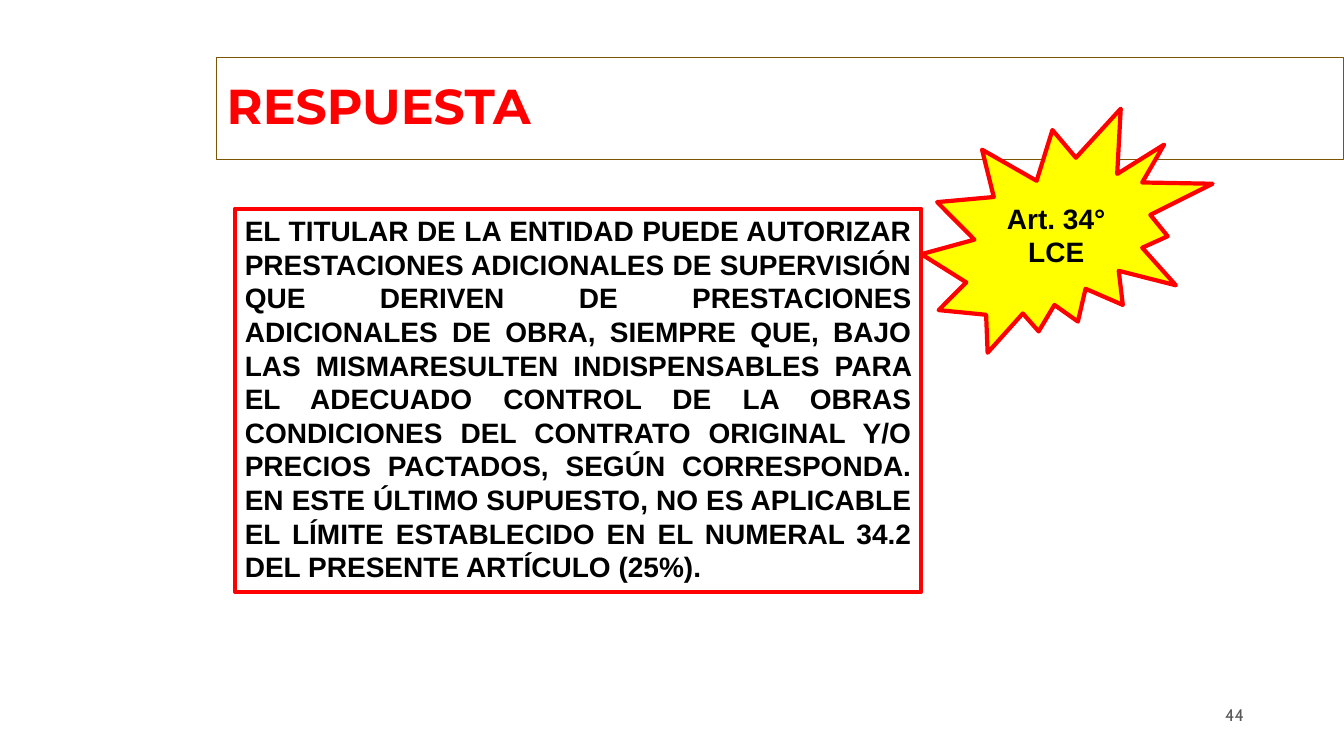
from dataclasses import dataclass

from pptx import Presentation
from pptx.dml.color import RGBColor
from pptx.enum.shapes import MSO_SHAPE
from pptx.enum.text import MSO_ANCHOR, MSO_AUTO_SIZE, PP_ALIGN
from pptx.util import Cm, Pt

HEADING = "RESPUESTA"
ANSWER = (
    "EL TITULAR DE LA ENTIDAD PUEDE AUTORIZAR PRESTACIONES ADICIONALES DE "
    "SUPERVISIÓN QUE DERIVEN DE PRESTACIONES ADICIONALES DE OBRA, SIEMPRE QUE, "
    "BAJO LAS MISMARESULTEN INDISPENSABLES PARA EL ADECUADO CONTROL DE LA OBRAS "
    "CONDICIONES DEL CONTRATO ORIGINAL Y/O PRECIOS PACTADOS, SEGÚN CORRESPONDA. "
    "EN ESTE ÚLTIMO SUPUESTO, NO ES APLICABLE EL LÍMITE ESTABLECIDO EN EL "
    "NUMERAL 34.2 DEL PRESENTE ARTÍCULO (25%)."
)
CITED_ARTICLE = "Art. 34° LCE"
PAGE_NUMBER = "44"


@dataclass(frozen=True)
class Theme:
    red: RGBColor = RGBColor(0xFF, 0x00, 0x00)
    yellow: RGBColor = RGBColor(0xFF, 0xFF, 0x00)
    brown: RGBColor = RGBColor(0x7C, 0x54, 0x05)
    black: RGBColor = RGBColor(0x00, 0x00, 0x00)
    gray: RGBColor = RGBColor(0x59, 0x59, 0x59)
    heading_size: Pt = Pt(35)
    body_size: Pt = Pt(20)
    number_size: Pt = Pt(12)
    thin: Pt = Pt(0.75)
    thick: Pt = Pt(3)


THEME = Theme()
HEADING_FONT = {"name": "Montserrat", "size": THEME.heading_size, "bold": True}
BODY_FONT = {"name": "Arial", "size": THEME.body_size, "bold": True}
NUMBER_FONT = {"name": "Cabin", "size": THEME.number_size, "bold": False}

SLIDE_WIDTH, SLIDE_HEIGHT = Cm(33.87), Cm(19.05)
HEADING_LEFT = Cm(5.46)
ANSWER_LEFT, ANSWER_WIDTH = Cm(5.92), Cm(17.3)


def set_all(target, values):
    for attribute, value in values.items():
        setattr(target, attribute, value)


def place(shape, left, top, width, height):
    set_all(shape, {"left": left, "top": top, "width": width, "height": height})


def outline(shape, color, width, fill=None):
    """Draw the border; without a fill colour the inside stays clear."""
    if fill is None:
        shape.fill.background()
    else:
        shape.fill.solid()
        shape.fill.fore_color.rgb = fill
    shape.line.color.rgb = color
    shape.line.width = width


def write(shape, text, font, color, align, anchor=MSO_ANCHOR.MIDDLE,
          auto_size=MSO_AUTO_SIZE.NONE):
    frame = shape.text_frame
    set_all(frame, {"word_wrap": True, "auto_size": auto_size,
                    "vertical_anchor": anchor})
    paragraph = frame.paragraphs[0]
    paragraph.alignment = align
    run = paragraph.add_run()
    run.text = text
    set_all(run.font, font)
    run.font.color.rgb = color
    return paragraph


def main():
    deck = Presentation()
    set_all(deck, {"slide_width": SLIDE_WIDTH, "slide_height": SLIDE_HEIGHT})
    slide = deck.slides.add_slide(deck.slide_layouts[5])
    shapes = slide.shapes

    heading = shapes.title
    place(heading, HEADING_LEFT, Cm(1.45), SLIDE_WIDTH - HEADING_LEFT, Cm(2.57))
    outline(heading, THEME.brown, THEME.thin)
    write(heading, HEADING, HEADING_FONT, THEME.red,
          PP_ALIGN.LEFT).line_spacing = 0.9

    answer = shapes.add_shape(MSO_SHAPE.RECTANGLE, ANSWER_LEFT, Cm(5.26),
                              ANSWER_WIDTH, Cm(9.65))
    outline(answer, THEME.red, THEME.thick)
    write(answer, ANSWER, BODY_FONT, THEME.black, PP_ALIGN.JUSTIFY,
          MSO_ANCHOR.TOP, MSO_AUTO_SIZE.SHAPE_TO_FIT_TEXT)

    seal = shapes.add_shape(MSO_SHAPE.EXPLOSION2, ANSWER_LEFT + ANSWER_WIDTH,
                            Cm(2.74), Cm(7.34), Cm(6.15))
    outline(seal, THEME.red, THEME.thick, THEME.yellow)
    write(seal, CITED_ARTICLE, BODY_FONT, THEME.black, PP_ALIGN.CENTER)

    for drawn in (answer, seal):
        drawn.shadow.inherit = False

    number = shapes.add_textbox(Cm(24.26), Cm(17.35), Cm(7.34), Cm(1.32))
    write(number, PAGE_NUMBER, NUMBER_FONT, THEME.gray, PP_ALIGN.RIGHT)

    deck.save("out.pptx")


if __name__ == "__main__":
    main()
